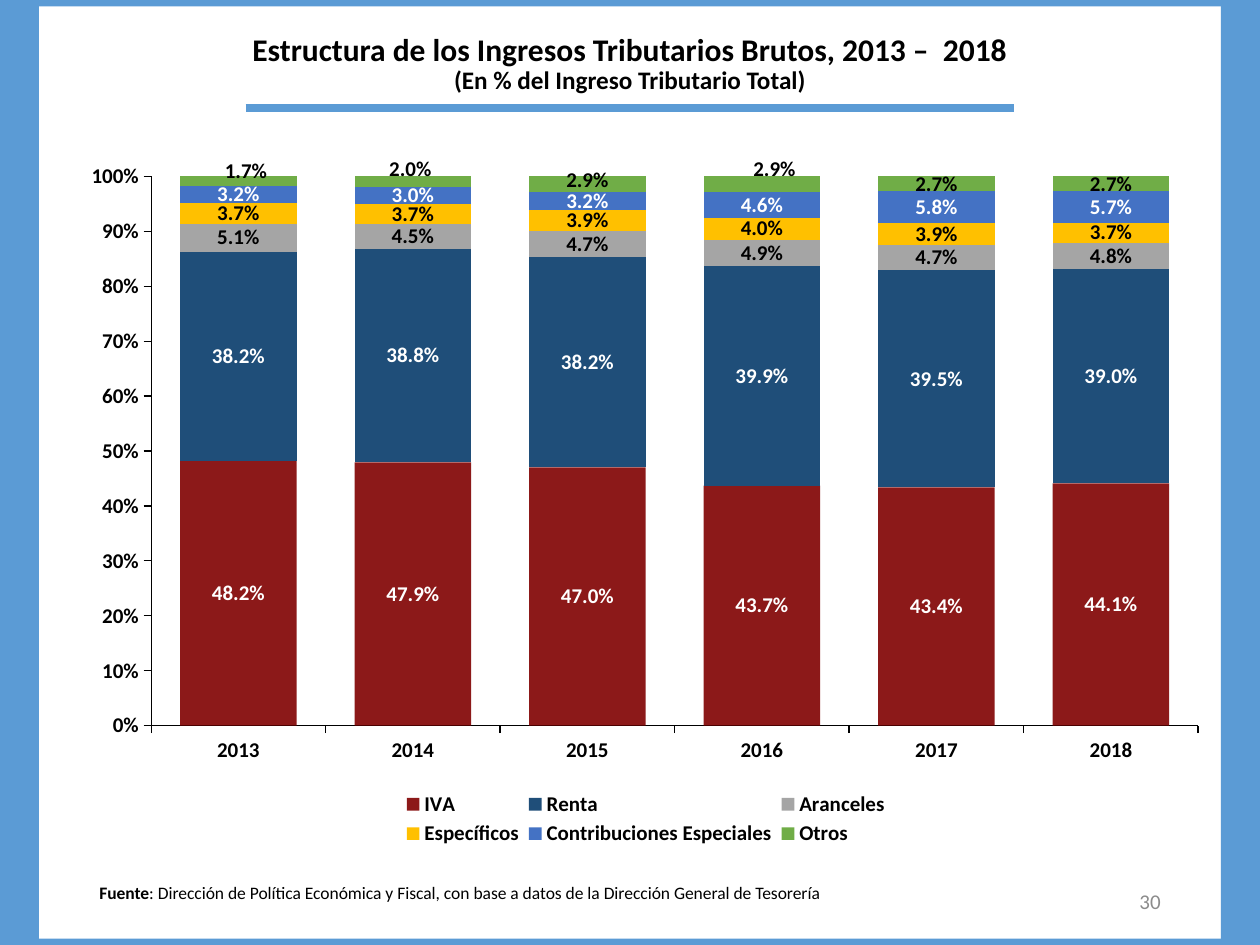
from lxml.etree import SubElement
from pptx import Presentation
from pptx.chart.data import CategoryChartData
from pptx.dml.color import RGBColor
from pptx.enum.chart import XL_CHART_TYPE as ChartType, XL_LEGEND_POSITION as LegendPos
from pptx.enum.chart import XL_TICK_MARK as Tick
from pptx.enum.shapes import MSO_CONNECTOR as Connector, MSO_SHAPE as Shape
from pptx.enum.text import MSO_ANCHOR as Anchor, PP_ALIGN as Align
from pptx.oxml import parse_xml
from pptx.oxml.ns import nsdecls, qn
from pptx.util import Inches, Pt

COLORS = {
    "frame": "5B9BD5", "text": "000000", "light": "FFFFFF", "page": "8C8C8C",
    "iva": "800000", "renta": "1F4E79", "aranceles": "A5A5A5",
    "especificos": "FFC000", "contribuciones": "4472C4", "otros": "70AD47",
}
YEARS = ["2013", "2014", "2015", "2016", "2017", "2018"]
# name, fill, label colour, share of each year
TAXES = [
    ("IVA", "iva", "light", [0.482, 0.479, 0.470, 0.437, 0.434, 0.441]),
    ("Renta", "renta", "light", [0.382, 0.388, 0.382, 0.399, 0.395, 0.390]),
    ("Aranceles", "aranceles", "text", [0.051, 0.045, 0.047, 0.049, 0.047, 0.048]),
    ("Específicos", "especificos", "text", [0.037, 0.037, 0.039, 0.040, 0.039, 0.037]),
    ("Contribuciones Especiales", "contribuciones", "light",
     [0.032, 0.030, 0.032, 0.046, 0.058, 0.057]),
    ("Otros", "otros", "text", [0.017, 0.020, 0.029, 0.029, 0.027, 0.027]),
]
# Shifts of the "Otros" labels in inches, by year
LABEL_SHIFTS = [(0.06, -0.08), (-0.02, -0.1), (0, -0.03), (0.1, -0.12)]


def rgb(name):
    return RGBColor.from_string(COLORS[name])


def manual_layout(values):
    parts = "".join(f'<c:{key} val="{value}"/>' for key, value in values.items())
    return parse_xml(f'<c:layout {nsdecls("c")}><c:manualLayout>{parts}'
                     "</c:manualLayout></c:layout>")


def edge_layout(chart_box, area, **target):
    """Layout of an area, given in slide inches, inside the chart's box."""
    left, top, width, height = chart_box
    x, y, w, h = area
    return manual_layout({**target, "xMode": "edge", "yMode": "edge",
                          "x": round((x - left) / width, 4),
                          "y": round((y - top) / height, 4),
                          "w": round(w / width, 4), "h": round(h / height, 4)})


class SlideBuilder:
    def __init__(self, slide, face="Calibri"):
        self.slide = slide
        self.face = face

    def style(self, font, size, color="text", bold=True):
        values = {"name": self.face, "size": Pt(size), "bold": bold}
        for key, value in values.items():
            setattr(font, key, value)
        font.color.rgb = rgb(color)

    def add_words(self, paragraph, words, size, color="text", bold=True):
        run = paragraph.add_run()
        run.text = words
        self.style(run.font, size, color, bold)

    def bar(self, *box):
        bar = self.slide.shapes.add_shape(Shape.RECTANGLE, *map(Inches, box))
        bar.shadow.inherit = False
        bar.fill.solid()
        bar.fill.fore_color.rgb = rgb("frame")
        bar.line.fill.background()

    def rule(self, left, right, y, weight):
        rule = self.slide.shapes.add_connector(
            Connector.STRAIGHT, Inches(left), Inches(y), Inches(right), Inches(y))
        rule.line.color.rgb = rgb("frame")
        rule.line.width = Pt(weight)
        SubElement(rule._element.spPr, qn("a:effectLst"))

    def title(self, box, heading, subheading):
        title = self.slide.shapes.title
        title.left, title.top, title.width, title.height = map(Inches, box)
        frame = title.text_frame
        frame.margin_top = Inches(0.03)
        frame.vertical_anchor = Anchor.TOP
        paragraph = frame.paragraphs[0]
        paragraph.alignment = Align.CENTER
        paragraph.line_spacing = 0.9
        self.add_words(paragraph, heading, 18)
        paragraph.add_line_break()
        self.add_words(paragraph, subheading, 14.4)

    def text(self, box, runs, size, color="text", align=Align.LEFT, anchor=Anchor.TOP):
        frame = self.slide.shapes.add_textbox(*map(Inches, box)).text_frame
        frame.word_wrap = True
        frame.vertical_anchor = anchor
        paragraph = frame.paragraphs[0]
        paragraph.alignment = align
        for words, bold in runs:
            self.add_words(paragraph, words, size, color, bold)

    def axis(self, axis):
        axis.has_major_gridlines = False
        axis.major_tick_mark = Tick.OUTSIDE
        axis.minor_tick_mark = Tick.NONE
        axis.format.line.color.rgb = rgb("text")
        axis.format.line.width = Pt(0.75)
        self.style(axis.tick_labels.font, 12)

    def series(self, series, fill, label_color):
        series.invert_if_negative = False
        series.format.fill.solid()
        series.format.fill.fore_color.rgb = rgb(fill)
        labels = series.data_labels
        labels.show_value = True
        labels.number_format = "0.0%"
        labels.number_format_is_linked = False
        self.style(labels.font, 12, label_color)

    def shift_labels(self, series, box, shifts):
        for index, (dx, dy) in enumerate(shifts):
            self.style(series.points[index].data_label.font, 12)
            label = series._element.xpath(f"c:dLbls/c:dLbl[c:idx/@val='{index}']")[0]
            label.insert(1, manual_layout({"x": round(dx / box[2], 4),
                                           "y": round(dy / box[3], 4)}))
            label.insert(2, parse_xml(f'<c:numFmt {nsdecls("c")} '
                                      'formatCode="0.0%" sourceLinked="0"/>'))

    def stacked_chart(self, box, plot_area, legend_area):
        data = CategoryChartData(number_format="0.0%")
        data.categories = YEARS
        for name, _, _, shares in TAXES:
            data.add_series(name, shares)
        chart = self.slide.shapes.add_chart(
            ChartType.COLUMN_STACKED_100, *map(Inches, box), data).chart
        chart.has_title = False
        self.style(chart.font, 10, bold=False)

        plot = chart.plots[0]
        plot.gap_width, plot.overlap, plot.vary_by_categories = 50, 100, False
        for series, (_, fill, label_color, _) in zip(plot.series, TAXES):
            self.series(series, fill, label_color)
        iva, *_, otros = plot.series
        iva_color = iva._element.xpath("c:spPr/a:solidFill/a:srgbClr")[0]
        SubElement(iva_color, qn("a:alpha"), val="90000")
        self.shift_labels(otros, box, LABEL_SHIFTS)

        for axis in (chart.category_axis, chart.value_axis):
            self.axis(axis)
        shares_axis = chart.value_axis
        shares_axis.minimum_scale, shares_axis.maximum_scale = 0, 1
        shares_axis.major_unit = 0.1
        shares_axis.tick_labels.number_format = "0%"
        shares_axis.tick_labels.number_format_is_linked = False

        chart.has_legend = True
        legend = chart.legend
        legend.position = LegendPos.BOTTOM
        legend.include_in_layout = False
        self.style(legend.font, 12)

        plot_element = chart._chartSpace.chart.plotArea
        for element, place, layout in (
            (plot_element, 0, edge_layout(box, plot_area, layoutTarget="inner")),
            (legend._element, 1, edge_layout(box, legend_area)),
        ):
            for old in element.findall(qn("c:layout")):
                element.remove(old)
            element.insert(place, layout)


def main():
    deck = Presentation()
    deck.slide_width, deck.slide_height = Inches(10), Inches(7.5)
    page = SlideBuilder(deck.slides.add_slide(deck.slide_layouts[5]))

    side, edge = 0.31, 0.05
    for left in (0, 10 - side):
        page.bar(left, 0, side, 7.5)
    for top in (0, 7.5 - edge):
        page.bar(side, top, 10 - 2 * side, edge)
    page.rule(1.95, 8.05, 0.86, 4.5)

    page.title((0.69, 0.24, 8.62, 0.76),
               "Estructura de los Ingresos Tributarios Brutos, 2013 –  2018",
               "(En % del Ingreso Tributario Total)")
    page.text((7.06, 6.95, 2.25, 0.4), [("30", False)], 12, "page",
              Align.RIGHT, Anchor.MIDDLE)
    page.stacked_chart((0.55, 1.19, 9.15, 5.56),
                       plot_area=(1.2, 1.4, 8.31, 4.36),
                       legend_area=(3.15, 6.25, 3.95, 0.5))
    page.text((0.69, 6.95, 8.3, 0.27),
              [("Fuente", True),
               (": Dirección de Política Económica y Fiscal, con base a datos de la "
                "Dirección General de Tesorería", False)], 10)
    deck.save("out.pptx")


if __name__ == "__main__":
    main()
